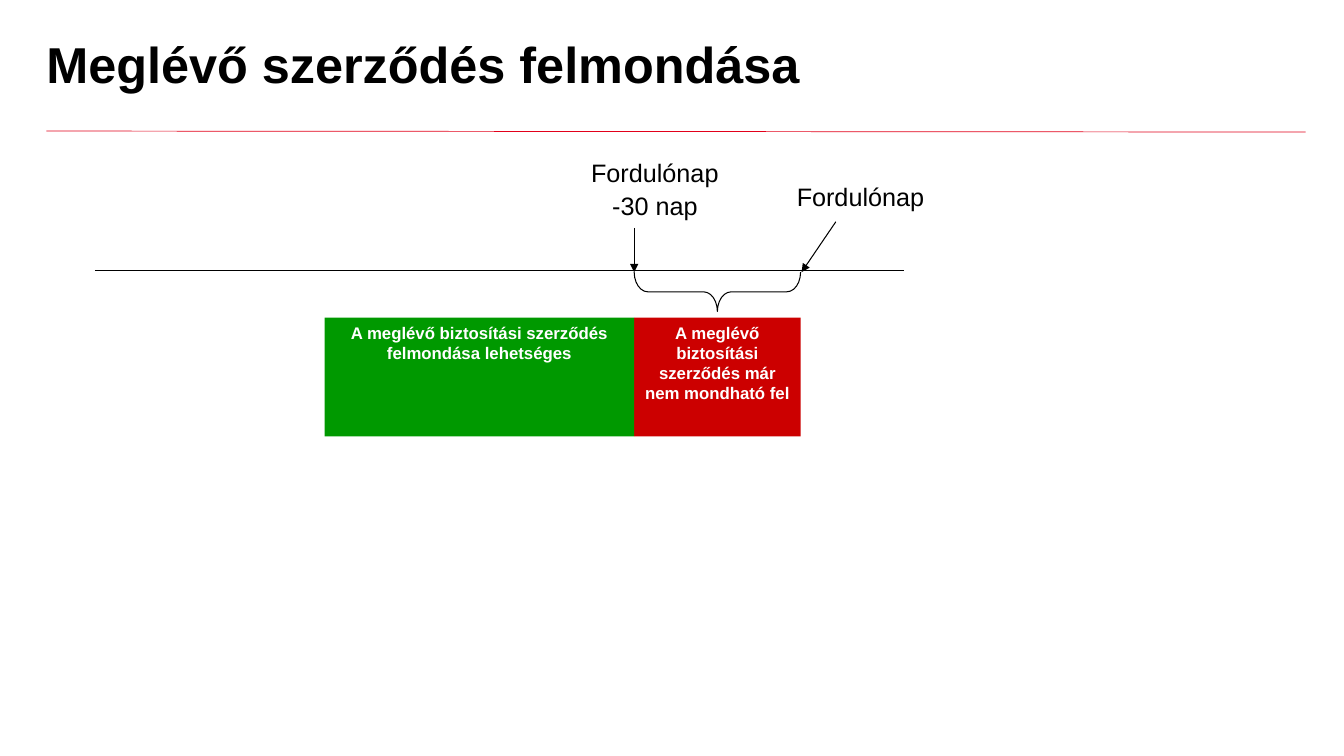
from dataclasses import dataclass

from lxml.etree import SubElement
from pptx import Presentation
from pptx.dml.color import RGBColor
from pptx.enum.shapes import MSO_CONNECTOR, MSO_SHAPE
from pptx.enum.text import MSO_ANCHOR, PP_ALIGN
from pptx.oxml.ns import qn
from pptx.shapes.base import BaseShape
from pptx.slide import Slide
from pptx.text.text import TextFrame
from pptx.util import Inches, Pt

BLACK = "000000"
WHITE = "FFFFFF"
DEADLINE_X = 6.29
ANNIVERSARY_X = 7.94
PERIOD_TOP = 3.15
PERIOD_HEIGHT = 1.18


@dataclass
class Line:
    start: tuple[float, float]
    end: tuple[float, float]
    color: str = BLACK
    width: float = 0.75
    arrow: bool = False


@dataclass
class Label:
    left: float
    top: float
    height: float
    lines: list[str]
    line_spacing: float = 1.0


@dataclass
class Period:
    left: float
    right: float
    color: str
    text: str


LINES = [
    Line((0.46, 1.3), (12.95, 1.31), color="E2001A", width=0.5),
    Line((0.94, 2.68), (8.97, 2.68)),
    Line((8.29, 2.2), (7.95, 2.7), arrow=True),
    Line((DEADLINE_X, 2.26), (DEADLINE_X, 2.7), arrow=True),
]
LABELS = [
    Label(7.63, 1.75, 0.4, ["Fordulónap"]),
    Label(5.59, 1.59, 0.67, ["Fordulónap", "-30 nap"], line_spacing=0.7),
]
PERIODS = [
    Period(DEADLINE_X, ANNIVERSARY_X, "CC0000",
           "A meglévő biztosítási szerződés már nem mondható fel"),
    Period(3.22, DEADLINE_X, "009900",
           "A meglévő biztosítási szerződés felmondása lehetséges"),
]


def rgb(color: str) -> RGBColor:
    return RGBColor.from_string(color)


def write_text(frame: TextFrame, lines: list[str], *, size: float, color: str = BLACK,
               bold: bool = False, align: PP_ALIGN = PP_ALIGN.CENTER,
               anchor: MSO_ANCHOR = MSO_ANCHOR.TOP, line_spacing: float = 1.0) -> None:
    frame.word_wrap = True
    frame.vertical_anchor = anchor
    for index, line in enumerate(lines):
        paragraph = frame.add_paragraph() if index else frame.paragraphs[0]
        paragraph.alignment = align
        paragraph.line_spacing = line_spacing
        paragraph.space_before = Pt(size / 2 if index else 0)
        run = paragraph.add_run()
        run.text = line
        run.font.name = "Arial"
        run.font.size = Pt(size)
        run.font.bold = bold
        run.font.color.rgb = rgb(color)


def add_title(slide: Slide, text: str) -> None:
    title = slide.shapes.title
    title.left, title.top = Inches(0.46), Inches(0.34)
    title.width, title.height = Inches(9.17), Inches(0.65)
    title.text_frame.margin_left = title.text_frame.margin_right = 0
    write_text(title.text_frame, [text], size=36, bold=True, align=PP_ALIGN.LEFT,
               anchor=MSO_ANCHOR.MIDDLE, line_spacing=0.9)


def add_line(slide: Slide, line: Line) -> None:
    connector = slide.shapes.add_connector(
        MSO_CONNECTOR.STRAIGHT, *map(Inches, line.start + line.end))
    connector.line.color.rgb = rgb(line.color)
    connector.line.width = Pt(line.width)
    if line.arrow:
        SubElement(connector.line._get_or_add_ln(), qn("a:tailEnd"), type="triangle")
    SubElement(connector._element.spPr, qn("a:effectLst"))


def add_label(slide: Slide, label: Label) -> None:
    box = slide.shapes.add_textbox(
        Inches(label.left), Inches(label.top), Inches(1.81), Inches(label.height))
    write_text(box.text_frame, label.lines, size=18, line_spacing=label.line_spacing)


def add_plain_shape(slide: Slide, kind: MSO_SHAPE, left: float, top: float,
                    width: float, height: float) -> BaseShape:
    shape = slide.shapes.add_shape(
        kind, Inches(left), Inches(top), Inches(width), Inches(height))
    shape.shadow.inherit = False
    return shape


def add_brace(slide: Slide) -> None:
    brace = add_plain_shape(slide, MSO_SHAPE.LEFT_BRACE, 6.92, 2.07, 0.39,
                            ANNIVERSARY_X - DEADLINE_X)
    brace.rotation = 270
    brace.adjustments[0] = 0.35
    brace.fill.background()
    brace.line.color.rgb = rgb(BLACK)
    brace.line.width = Pt(0.75)


def add_period(slide: Slide, period: Period) -> None:
    box = add_plain_shape(slide, MSO_SHAPE.RECTANGLE, period.left, PERIOD_TOP,
                          period.right - period.left, PERIOD_HEIGHT)
    box.fill.solid()
    box.fill.fore_color.rgb = rgb(period.color)
    box.line.fill.background()
    write_text(box.text_frame, [period.text], size=12, color=WHITE, bold=True)


def main() -> None:
    presentation = Presentation()
    presentation.slide_width = Inches(13.33)
    presentation.slide_height = Inches(7.5)
    slide = presentation.slides.add_slide(presentation.slide_layouts[5])
    add_title(slide, "Meglévő szerződés felmondása")
    for label in LABELS:
        add_label(slide, label)
    add_brace(slide)
    for period in PERIODS:
        add_period(slide, period)
    for line in LINES:
        add_line(slide, line)
    presentation.save("out.pptx")


if __name__ == "__main__":
    main()
